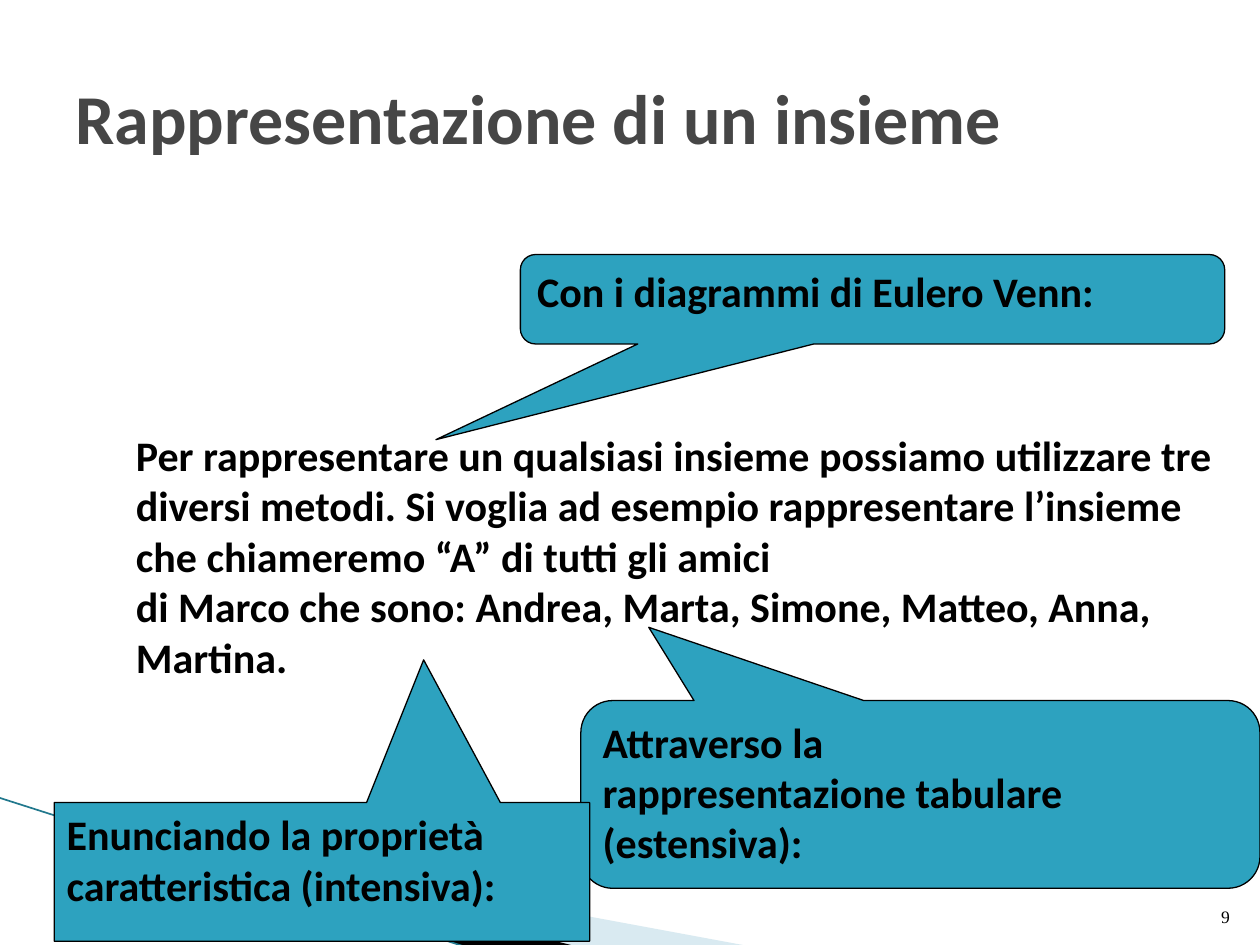
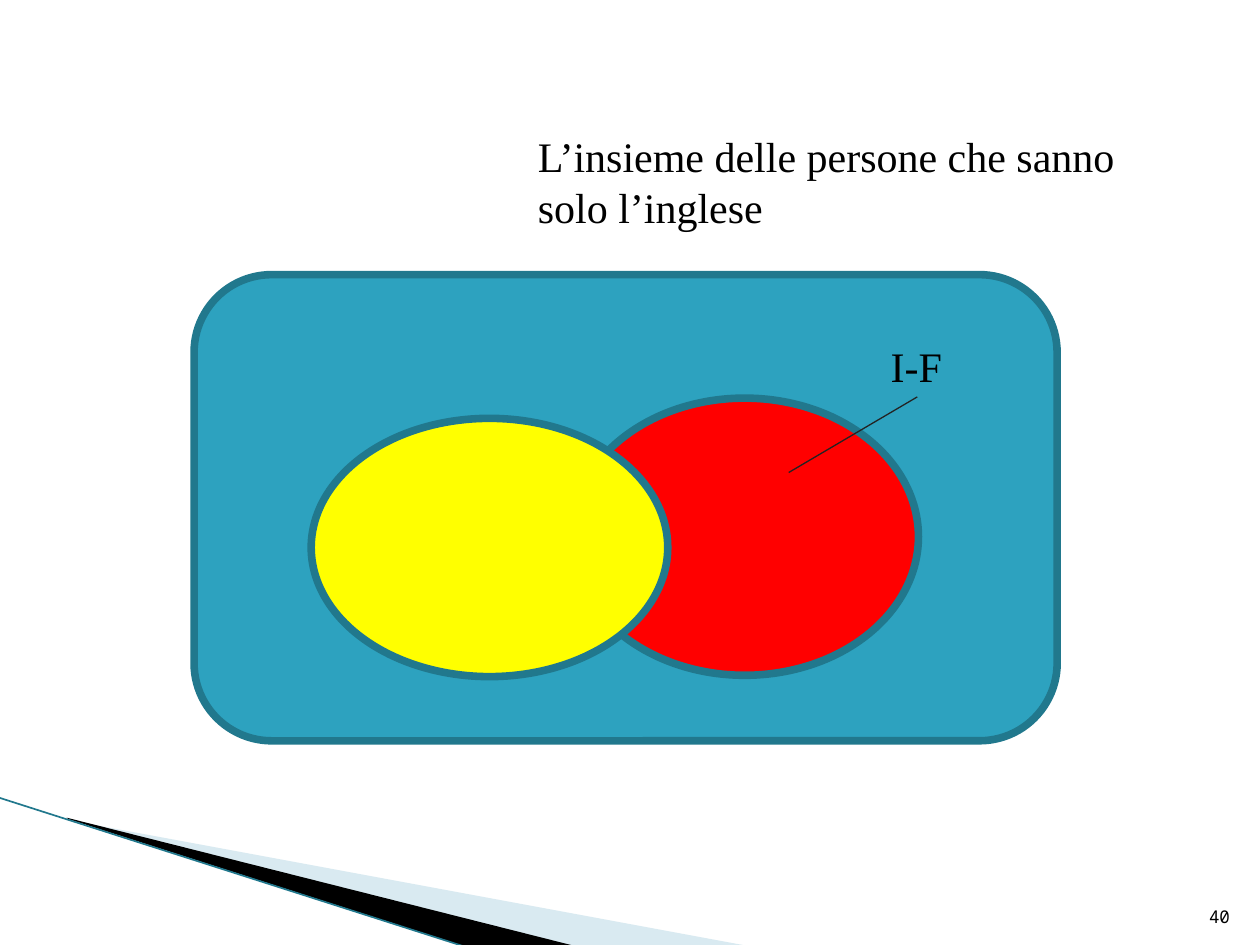
"""Build two slides on sets: ways to represent a set, and a Venn difference."""
from lxml import etree
from pptx import Presentation
from pptx.dml.color import RGBColor
from pptx.enum.shapes import MSO_CONNECTOR, MSO_SHAPE
from pptx.enum.text import MSO_ANCHOR, PP_ALIGN
from pptx.oxml.ns import qn
from pptx.util import Pt

PX = 9144
TEAL = RGBColor(0x2D, 0xA2, 0xBF)
DARK_TEAL = RGBColor(0x21, 0x78, 0x8D)
PALE_BLUE = RGBColor(0xA0, 0xCB, 0xDC)
BLACK = RGBColor(0, 0, 0)
CHARCOAL = RGBColor(0x23, 0x23, 0x23)
TITLE_GREY = RGBColor(0x46, 0x46, 0x46)
RED = RGBColor(0xFF, 0, 0)
YELLOW = RGBColor(0xFF, 0xFF, 0)
SANS, SERIF, MONO = "Calibri", "Times New Roman", "Noto Sans Mono"
LEFT, RIGHT = PP_ALIGN.LEFT, PP_ALIGN.RIGHT
TOP, MIDDLE, BOTTOM = MSO_ANCHOR.TOP, MSO_ANCHOR.MIDDLE, MSO_ANCHOR.BOTTOM
ROUND_CALLOUT = MSO_SHAPE.ROUNDED_RECTANGULAR_CALLOUT
RECT_CALLOUT = MSO_SHAPE.RECTANGULAR_CALLOUT
ROUND_RECT, OVAL = MSO_SHAPE.ROUNDED_RECTANGLE, MSO_SHAPE.OVAL
STRAIGHT = MSO_CONNECTOR.STRAIGHT


def write(frame, lines, font, size=24, bold=False, color=BLACK, align=LEFT, anchor=TOP):
    frame.word_wrap = True
    frame.vertical_anchor = anchor
    for index, line in enumerate(lines):
        paragraph = frame.paragraphs[0] if index == 0 else frame.add_paragraph()
        paragraph.alignment = align
        run = paragraph.add_run()
        run.text = line
        run.font.name = font
        run.font.size = Pt(size)
        run.font.bold = bold
        run.font.color.rgb = color


def draw_line(slide, ends, color, width):
    line = slide.shapes.add_connector(STRAIGHT, *(v * PX for v in ends))
    line.line.color.rgb = color
    line.line.width = Pt(width)
    etree.SubElement(line._element.spPr, qn("a:effectLst"))


prs = Presentation()
prs.slide_width, prs.slide_height = 1000 * PX, 750 * PX
methods = prs.slides.add_slide(prs.slide_layouts[5])
difference = prs.slides.add_slide(prs.slide_layouts[6])

WEDGES = [
    ([(55, 651), (595, 751), (456, 751), (55, 650)], PALE_BLUE, 40),
    ([(53, 649), (457, 751), (372, 752), (54, 650)], BLACK, 100),
]
for slide, number, number_font in [(methods, "9", SERIF), (difference, "40", MONO)]:
    for points, color, opacity in WEDGES:
        outline = slide.shapes.build_freeform(*points[0], scale=PX)
        outline.add_line_segments(points[1:], close=True)
        wedge = outline.convert_to_shape()
        wedge.shadow.inherit = False
        wedge.fill.solid()
        wedge.fill.fore_color.rgb = color
        wedge.line.fill.background()
        if opacity < 100:
            tint = wedge._element.spPr.find(".//" + qn("a:srgbClr"))
            etree.SubElement(tint, qn("a:alpha"), val=str(opacity * 1000))
    draw_line(slide, (-1, 633, 371, 752), DARK_TEAL, 0.95)
    page = slide.shapes.add_textbox(946 * PX, 701 * PX, 40 * PX, 40 * PX)
    write(page.text_frame, [number], number_font, 10, align=RIGHT, anchor=BOTTOM)

title = methods.shapes.title
title.left, title.top, title.width, title.height = 50 * PX, 30 * PX, 900 * PX, 125 * PX
write(title.text_frame, ["Rappresentazione di un insieme"], SANS, 40, True, TITLE_GREY, anchor=MIDDLE)

example = methods.shapes.add_textbox(98 * PX, 336 * PX, 878 * PX, 212 * PX)
write(example.text_frame, [
    "Per rappresentare un qualsiasi insieme possiamo utilizzare tre diversi metodi. "
    "Si voglia ad esempio rappresentare l’insieme che chiameremo “A” di tutti gli amici",
    "di Marco che sono: Andrea, Marta, Simone, Matteo, Anna, Martina.",
], SANS, bold=True)

CALLOUTS = [
    (ROUND_CALLOUT, (413, 202, 559, 71), (-0.62, 1.57, 0.17),
     ["Con i diagrammi di Eulero Venn:"]),
    (ROUND_CALLOUT, (461, 556, 539, 149), (-0.4, -0.89, 0.17),
     ["Attraverso la", "rappresentazione tabulare", "(estensiva):"]),
    (RECT_CALLOUT, (43, 637, 425, 110), (0.19, -1.53),
     ["Enunciando la proprietà", "caratteristica (intensiva):"]),
]
SETS = [
    (ROUND_RECT, (154, 218, 685, 370), (), TEAL),
    (OVAL, (453, 316, 276, 220), (), RED),
    (OVAL, (247, 332, 283, 205), (), YELLOW),
]
figures = [(methods, kind, box, tail, TEAL, BLACK, 0.75, lines) for kind, box, tail, lines in CALLOUTS]
figures += [(difference, *region, DARK_TEAL, 4.33, []) for region in SETS]
for slide, kind, box, adjustments, fill, border, width, lines in figures:
    figure = slide.shapes.add_shape(kind, *(v * PX for v in box))
    figure.shadow.inherit = False
    figure.fill.solid()
    figure.fill.fore_color.rgb = fill
    figure.line.color.rgb = border
    figure.line.width = Pt(width)
    for index, value in enumerate(adjustments):
        figure.adjustments[index] = value
    write(figure.text_frame, lines, SANS, bold=True)

draw_line(difference, (626, 375, 728, 315), CHARCOAL, 0.75)
for box, caption in [
    ((697, 265, 118, 50), "I-F"),
    ((417, 99, 520, 91), "L’insieme delle persone che sanno solo l’inglese"),
]:
    label = difference.shapes.add_textbox(*(v * PX for v in box))
    write(label.text_frame, [caption], SERIF)

prs.save("out.pptx")
